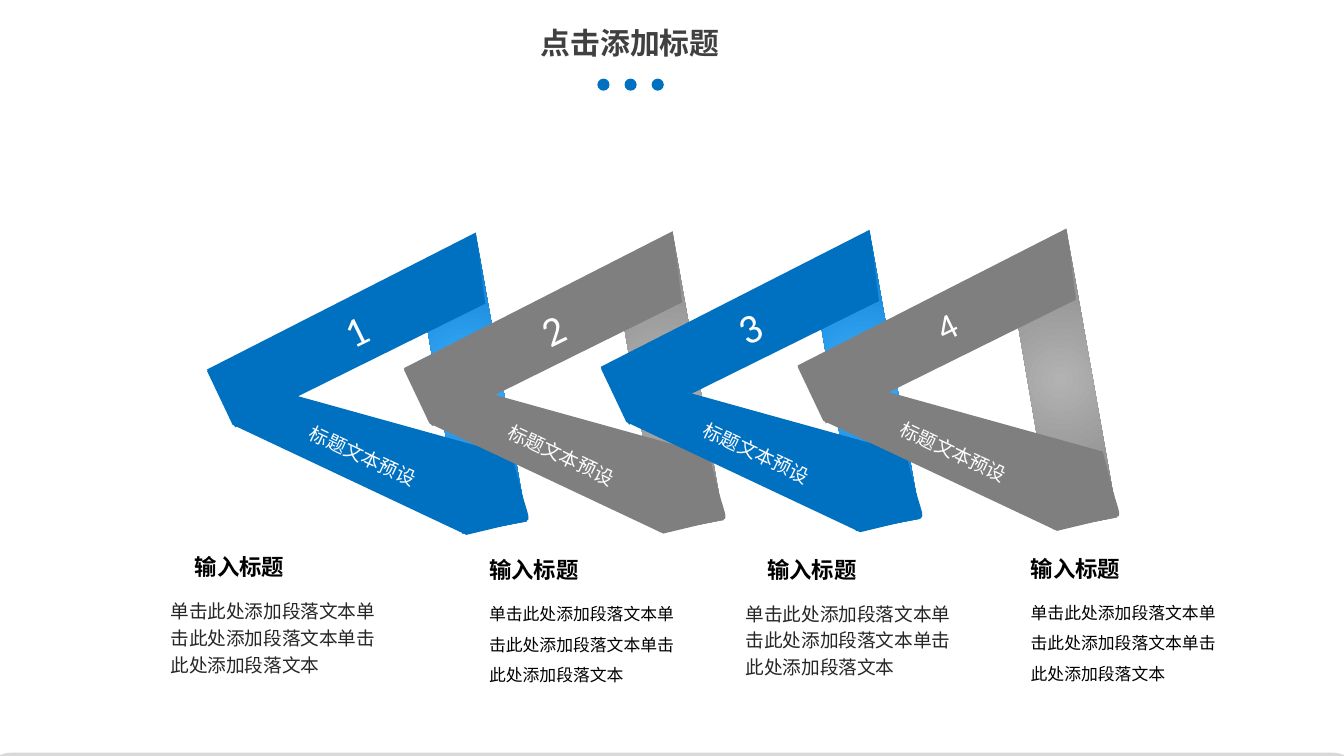
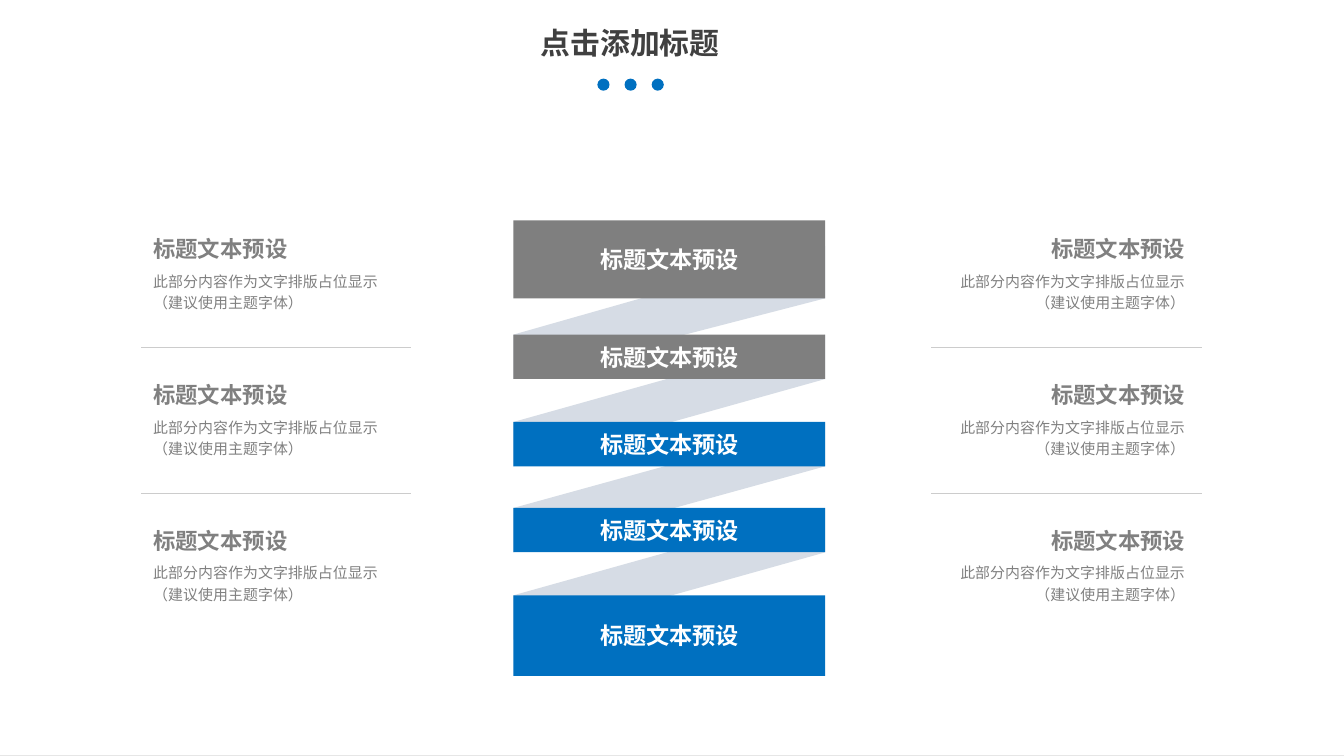
import math

import lxml.etree
import pptx
import pptx.dml.color
import pptx.enum.shapes
import pptx.enum.text
import pptx.oxml.ns
import pptx.util

COLOURS = {
    "blue": "0070C0", "light blue": "40AFFF", "grey": "7F7F7F", "light grey": "B2B2B2",
    "fold": "D6DCE5", "title": "404040", "body": "262626", "aside": "808080",
    "rule": "CCCCCC", "footer": "D9D9D9", "white": "FFFFFF", "black": "000000",
}
COLUMNS, ROWS = 1000, 562.5
CELL = pptx.util.Inches(10) // COLUMNS
CJK, LATIN = "Noto Sans CJK SC", "Calibri"
ALIGN = pptx.enum.text.PP_ALIGN
ANCHOR = pptx.enum.text.MSO_ANCHOR
SHAPE = pptx.enum.shapes.MSO_SHAPE
DEFAULT_INSETS = (10, 5, 10, 5)
NO_INSETS = (0, 0, 0, 0)
LABEL = "标题文本预设"
HEADING = "输入标题"
PARAGRAPH = "单击此处添加段落文本" * 3
ASIDE = "此部分内容作为文字排版占位显示\n（建议使用主题字体）"


def cells(*lengths):
    """Convert grid lengths to EMU."""
    return [round(length * CELL) for length in lengths]


def rgb(name):
    """Look up a named colour."""
    return pptx.dml.color.RGBColor.from_string(COLOURS[name])


def tag(name):
    """Expand a prefixed XML name."""
    return pptx.oxml.ns.qn(name)


def paint(shape, colour):
    """Give a shape a plain fill without outline or shadow."""
    shape.shadow.inherit = False
    shape.fill.solid()
    shape.fill.fore_color.rgb = rgb(colour)
    shape.line.fill.background()
    return shape


def glow(shape, inner, outer):
    """Fill a shape with a gradient running out from its centre."""
    shape.fill.gradient()
    for stop, colour in zip(shape.fill.gradient_stops, (inner, outer)):
        stop.color.rgb = rgb(colour)
    gradient = shape._element.spPr.find(tag("a:gradFill"))
    gradient.remove(gradient.find(tag("a:lin")))
    circle = lxml.etree.SubElement(gradient, tag("a:path"), {"path": "circle"})
    sides = dict.fromkeys("ltrb", "50000")
    lxml.etree.SubElement(circle, tag("a:fillToRect"), sides)


def write(frame, text, size, colour, font=CJK, bold=False, align=ALIGN.LEFT,
          spacing=None, insets=DEFAULT_INSETS, anchor=ANCHOR.TOP, wrap=True):
    """Set a frame's single paragraph and format it."""
    frame.word_wrap = wrap
    frame.vertical_anchor = anchor
    (frame.margin_left, frame.margin_top,
     frame.margin_right, frame.margin_bottom) = cells(*insets)
    paragraph = frame.paragraphs[0]
    paragraph.text = text
    paragraph.alignment = align
    paragraph.line_spacing = spacing
    for run in paragraph.runs:
        run.font.size = pptx.util.Pt(size)
        run.font.bold = bold
        run.font.name = font
        run.font.color.rgb = rgb(colour)
        lxml.etree.SubElement(run.font._element, tag("a:ea"), {"typeface": CJK})
    for line_break in paragraph._p.findall(tag("a:br")):
        lxml.etree.SubElement(line_break, tag("a:rPr"), {"sz": str(size * 100)})


def add_text(slide, box, text, size, colour, grow=False, **style):
    """Add a text box on the grid."""
    frame = slide.shapes.add_textbox(*cells(*box)).text_frame
    write(frame, text, size, colour, **style)
    if grow:
        frame.auto_size = pptx.enum.text.MSO_AUTO_SIZE.SHAPE_TO_FIT_TEXT


def add_block(slide, kind, box, colour):
    """Add a plain preset shape on the grid."""
    return paint(slide.shapes.add_shape(kind, *cells(*box)), colour)


def add_outline(slide, points, colour):
    """Add a closed outline through grid points."""
    corners = [cells(*point) for point in points]
    builder = slide.shapes.build_freeform(*corners[0], scale=1.0)
    builder.add_line_segments(corners[1:], close=True)
    return paint(builder.convert_to_shape(), colour)


def turn(point, degrees):
    """Rotate a point clockwise about the origin."""
    x, y = point
    sine, cosine = math.sin(math.radians(degrees)), math.cos(math.radians(degrees))
    return x * cosine - y * sine, x * sine + y * cosine


def add_turned_outline(slide, points, colour, degrees):
    """Add an outline whose own axes are rotated, so its text follows them."""
    upright = [turn(point, -degrees) for point in points]
    middle = [(min(axis) + max(axis)) / 2 for axis in zip(*upright)]
    centre = turn(middle, degrees)
    shifts = [there - here for there, here in zip(centre, middle)]
    outline = add_outline(
        slide, [(x + shifts[0], y + shifts[1]) for x, y in upright], colour)
    outline.rotation = degrees % 360
    return outline


def curve(start, pull, push, end, steps=8):
    """Return points along a cubic curve."""
    points = []
    for step in range(steps + 1):
        t = step / steps
        weights = ((1 - t) ** 3, 3 * t * (1 - t) ** 2, 3 * t * t * (1 - t), t ** 3)
        points.append(tuple(
            sum(w * p for w, p in zip(weights, axis))
            for axis in zip(start, pull, push, end)))
    return points


def add_footer(slide, cover_top):
    """Draw the footer arc and the white cover over it."""
    right = curve((500, 526), (709, 526), (893, 540), (995, 561), 16)
    left = [(COLUMNS - x, y) for x, y in reversed(right)]
    arc = add_outline(
        slide, right + [(COLUMNS, ROWS), (0, ROWS)] + left[:-1], "footer")
    arc.line.color.rgb = rgb("footer")
    arc.line.width = pptx.util.Pt(1)
    add_block(slide, SHAPE.RECTANGLE, (0, cover_top, COLUMNS, 52), "white")


def add_page(deck, cover_top):
    """Add a slide with the shared footer, title and dots."""
    slide = deck.slides.add_slide(deck.slide_layouts[5])
    add_footer(slide, cover_top)
    title = slide.shapes.title
    title.left, title.top, title.width, title.height = cells(247, 13.5, 444, 37)
    write(title.text_frame, "点击添加标题", 16, "title", bold=True, align=ALIGN.CENTER)
    for dot in range(3):
        add_block(slide, SHAPE.OVAL, (444.5 + 20.2 * dot, 58.5, 9, 9), "blue")
    return slide


def add_ribbon(slide, box, number, number_size, colour, insets):
    """Draw one folded arrow: back strip, numbered strip and labelled strip."""
    left, top, width, height = box

    def place(points):
        return [(left + x * width / 240, top + y * height / 228) for x, y in points]

    back = add_turned_outline(
        slide, place([(156, 28), (200, 4), (238, 218), (190, 227)]), colour, -9.7)
    glow(back, "light " + colour, colour)
    numbered = add_turned_outline(
        slide, place([(200, 3), (207, 56), (21, 148), (0, 105)]), colour, 63.8)
    write(numbered.text_frame, number, number_size, "white", font=LATIN,
          align=ALIGN.CENTER, anchor=ANCHOR.MIDDLE, wrap=False)
    tip = curve((227, 169), (238, 214), (240, 212), (239, 217))
    labelled = add_turned_outline(
        slide, place(tip + [(193, 228), (19, 146), (0, 106)]), colour, 115.2)
    write(labelled.text_frame, LABEL, 10.2, "white", font=LATIN, align=ALIGN.CENTER,
          anchor=ANCHOR.BOTTOM, wrap=False, insets=insets)
    for strip in (numbered, labelled):
        strip.text_frame._txBody.bodyPr.set("vert", "vert270")


def add_caption(slide, heading_at, body_box, size, colour, spacing):
    """Write a heading and its paragraph."""
    add_text(slide, (*heading_at, 91, 30), HEADING, 12, "black", grow=True, bold=True)
    add_text(slide, body_box, PARAGRAPH, size, colour, grow=True, spacing=spacing)


def build_ribbons(deck):
    """Build the slide of four folded arrows."""
    slide = add_page(deck, 508)
    ribbons = (
        ("blue", 22.2, (0, 0, 12, 0)),
        ("grey", 22.2, (10, 5, 12, 12)),
        ("blue", 22.2, (10, 5, 12, 5)),
        ("grey", 19.4, (10, 5, 12, 5)),
    )
    for index, (colour, size, insets) in enumerate(ribbons):
        add_ribbon(slide, (154 + 146.5 * index, 170 - index, 240, 228),
                   str(index + 1), size, colour, insets)
    large, small = (10, "body", 1.2), (9, "black", 1.5)
    captions = (
        ((135, 407), (117, 438, 176, 138), large),
        ((354, 409), (354, 437, 168, 78), small),
        ((561, 409), (545, 440, 176, 135), large),
        ((757, 408), (757, 436, 168, 78), small),
    )
    for heading_at, body_box, style in captions:
        add_caption(slide, heading_at, body_box, *style)


def add_zigzag(slide, box):
    """Stack the labelled bars and the folds that join them."""
    left, top, width, _ = box
    right = left + width
    bars = [(top + row, height, depth, colour) for row, height, depth, colour in (
        (0, 58, 39, "grey"), (85, 33, 33, "grey"), (150, 33, 33, "blue"),
        (214, 33, 33, "blue"), (279, 60, 33, "blue"))]
    for (upper, height, depth, _), (lower, *_) in zip(bars, bars[1:]):
        bottom = upper + height
        add_outline(slide, [(right, bottom - depth), (left, lower),
                            (left, lower + 33), (right, bottom)], "fold")
    for bar_top, height, _, colour in bars:
        bar = add_block(slide, SHAPE.RECTANGLE, (left, bar_top, width, height), colour)
        write(bar.text_frame, LABEL, 12.4, "white", font=LATIN, bold=True,
              align=ALIGN.CENTER, anchor=ANCHOR.MIDDLE, wrap=False)


def add_rule(slide, left, top, width):
    """Draw a thin horizontal rule."""
    rule = slide.shapes.add_connector(
        pptx.enum.shapes.MSO_CONNECTOR.STRAIGHT, *cells(left, top, left + width, top))
    rule.line.color.rgb = rgb("rule")
    rule.line.width = pptx.util.Pt(0.5)
    lxml.etree.SubElement(rule._element.spPr, tag("a:effectLst"))


def add_asides(slide, box, align):
    """Write three notes down a column, with rules between them."""
    left, top, width, height = box
    text_width = 214
    text_left = left + 9 if align == ALIGN.LEFT else left + width - 12 - text_width
    pitch = (height - 67) / 2
    for row in range(3):
        note_top = top + row * pitch
        add_text(slide, (text_left, note_top + 25, text_width, 42), ASIDE, 8, "aside",
                 align=align, spacing=1.2, insets=NO_INSETS)
        add_text(slide, (text_left, note_top, text_width, 25), LABEL, 12, "aside",
                 bold=True, align=align, insets=NO_INSETS)
        if row:
            add_rule(slide, left, note_top - 25, width)


def build_zigzag(deck):
    """Build the slide of stacked bars between two columns of notes."""
    slide = add_page(deck, 510)
    add_zigzag(slide, (382, 164, 232, 339))
    add_asides(slide, (693, 175, 201, 284), ALIGN.RIGHT)
    add_asides(slide, (105, 175, 201, 284), ALIGN.LEFT)


def main():
    """Build and save the deck."""
    deck = pptx.Presentation()
    deck.slide_width, deck.slide_height = cells(COLUMNS, ROWS)
    build_ribbons(deck)
    build_zigzag(deck)
    deck.save("out.pptx")


if __name__ == "__main__":
    main()
